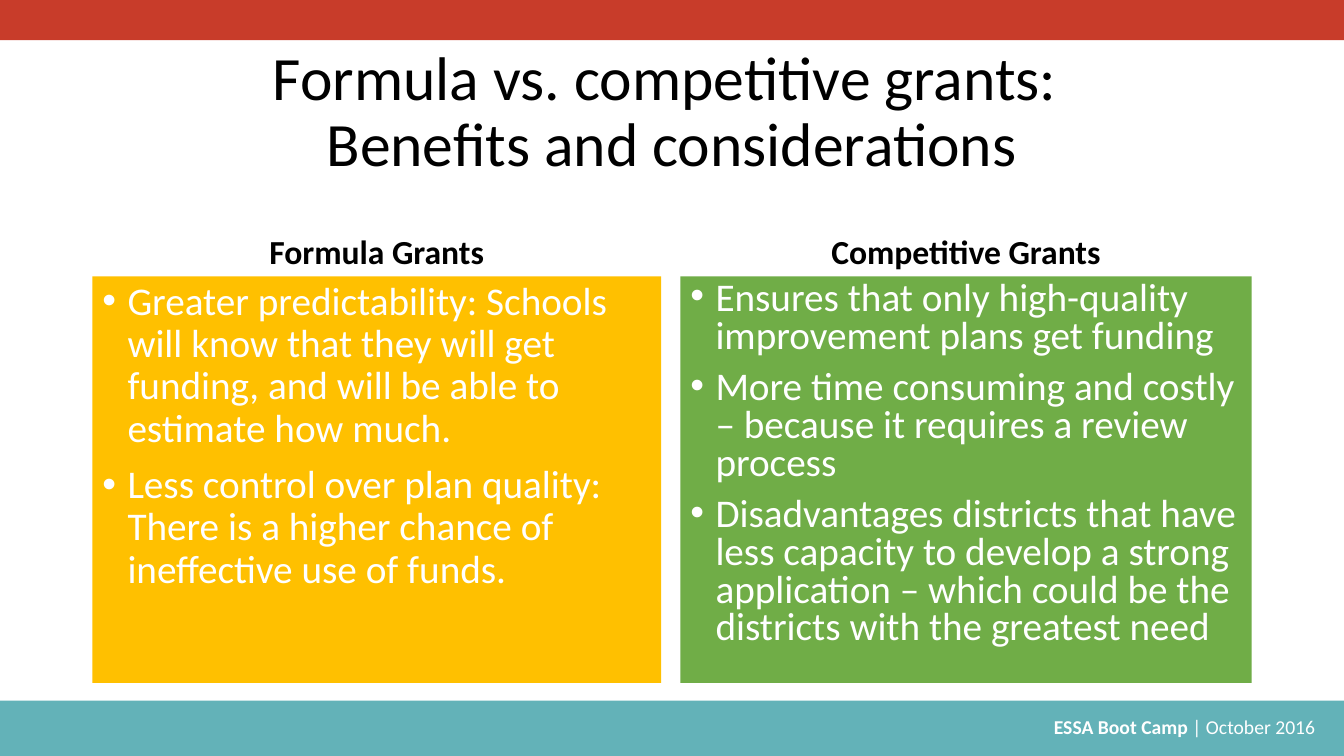
import dataclasses
import pptx
import pptx.dml.color
import pptx.enum.shapes
import pptx.enum.text
import pptx.util
from lxml import etree

ALIGN = pptx.enum.text.PP_ALIGN
ANCHOR = pptx.enum.text.MSO_ANCHOR


@dataclasses.dataclass(frozen=True)
class Theme:
    font: str = "Calibri"
    black: str = "000000"
    white: str = "FFFFFF"
    red: str = "C83C2A"
    teal: str = "63B2B8"
    gold: str = "FFC000"
    green: str = "70AD47"
    title_size: int = 44
    heading_size: int = 24
    body_size: int = 28
    footer_size: int = 14
    paragraph_gap: int = 10


class SlideBuilder:
    columns = 160
    rows = 90

    def __init__(self, presentation, theme):
        self.theme = theme
        self.cell_width = presentation.slide_width / self.columns
        self.cell_height = presentation.slide_height / self.rows
        self.slide = presentation.slides.add_slide(presentation.slide_layouts[5])

    def box(self, column, row, width, height):
        return (
            round(column * self.cell_width),
            round(row * self.cell_height),
            round(width * self.cell_width),
            round(height * self.cell_height),
        )

    def run(self, paragraph, text, size, color, bold=False):
        run = paragraph.add_run()
        run.text = text
        run.font.name = self.theme.font
        run.font.size = pptx.util.Pt(size)
        run.font.bold = bold
        run.font.color.rgb = pptx.dml.color.RGBColor.from_string(color)

    def frame(self, shape, anchor):
        frame = shape.text_frame
        frame.word_wrap = True
        frame.auto_size = pptx.enum.text.MSO_AUTO_SIZE.NONE
        frame.vertical_anchor = anchor
        return frame

    def title(self, area, lines):
        shape = self.slide.shapes.title
        shape.left, shape.top, shape.width, shape.height = self.box(*area)
        paragraph = self.frame(shape, ANCHOR.MIDDLE).paragraphs[0]
        paragraph.alignment = ALIGN.CENTER
        paragraph.line_spacing = 0.9
        for index, line in enumerate(lines):
            if index:
                paragraph.add_line_break()
            self.run(paragraph, line, self.theme.title_size, self.theme.black)

    def rectangle(self, area, color):
        shape = self.slide.shapes.add_shape(
            pptx.enum.shapes.MSO_SHAPE.RECTANGLE, *self.box(*area)
        )
        shape.shadow.inherit = False
        shape.fill.solid()
        shape.fill.fore_color.rgb = pptx.dml.color.RGBColor.from_string(color)
        shape.line.fill.background()
        return shape

    def text(self, area, anchor, alignment):
        shape = self.slide.shapes.add_textbox(*self.box(*area))
        paragraph = self.frame(shape, anchor).paragraphs[0]
        paragraph.alignment = alignment
        return paragraph

    def heading(self, area, text):
        paragraph = self.text(area, ANCHOR.BOTTOM, ALIGN.CENTER)
        paragraph.line_spacing = 0.9
        paragraph.space_before = pptx.util.Pt(self.theme.paragraph_gap)
        self.run(paragraph, text, self.theme.heading_size, self.theme.black, True)

    def bullet(self, paragraph):
        properties = paragraph._p.get_or_add_pPr()
        indent = pptx.util.Inches(0.25)
        properties.set("marL", str(indent))
        properties.set("indent", str(-indent))
        namespace = properties.nsmap["a"]
        font = etree.SubElement(properties, f"{{{namespace}}}buFont")
        font.set("typeface", "Arial")
        mark = etree.SubElement(properties, f"{{{namespace}}}buChar")
        mark.set("char", "•")

    def panel(self, area, color, points, line_spacing):
        frame = self.frame(self.rectangle(area, color), ANCHOR.TOP)
        for index, point in enumerate(points):
            paragraph = frame.add_paragraph() if index else frame.paragraphs[0]
            paragraph.alignment = ALIGN.LEFT
            paragraph.line_spacing = line_spacing
            paragraph.space_before = pptx.util.Pt(self.theme.paragraph_gap)
            self.bullet(paragraph)
            self.run(paragraph, point, self.theme.body_size, self.theme.white)

    def footer(self, area, event, date):
        paragraph = self.text(area, ANCHOR.TOP, ALIGN.RIGHT)
        self.run(paragraph, event, self.theme.footer_size, self.theme.white, True)
        self.run(paragraph, date, self.theme.footer_size, self.theme.white)


def main():
    presentation = pptx.Presentation()
    presentation.slide_width = pptx.util.Inches(13.33)
    presentation.slide_height = pptx.util.Inches(7.5)
    theme = Theme()
    builder = SlideBuilder(presentation, theme)

    builder.rectangle((0, 83.4, 160, 6.6), theme.teal)
    builder.rectangle((0, 0, 160, 4.8), theme.red)
    builder.footer((57.6, 84.5, 100.7, 4.1), "ESSA Boot Camp ", "| October 2016 ")
    builder.title(
        (11, 4.8, 138, 17.4),
        ["Formula vs. competitive grants: ", "Benefits and considerations"],
    )

    grants = [
        (11, 67.7, "Formula Grants", theme.gold, 0.9, [
            "Greater predictability: Schools will know that they will get "
            "funding, and will be able to estimate how much.",
            "Less control over plan quality: There is a higher chance of "
            "ineffective use of funds.",
        ]),
        (81, 68, "Competitive Grants", theme.green, 0.8, [
            "Ensures that only high-quality improvement plans get funding",
            "More time consuming and costly – because it requires a review process",
            "Disadvantages districts that have less capacity to develop a strong "
            "application – which could be the districts with the greatest need",
        ]),
    ]
    for column, width, name, color, line_spacing, points in grants:
        builder.heading((column, 22.1, width, 10.8), name)
        builder.panel((column, 32.9, width, 48.4), color, points, line_spacing)

    presentation.save("out.pptx")


if __name__ == "__main__":
    main()
